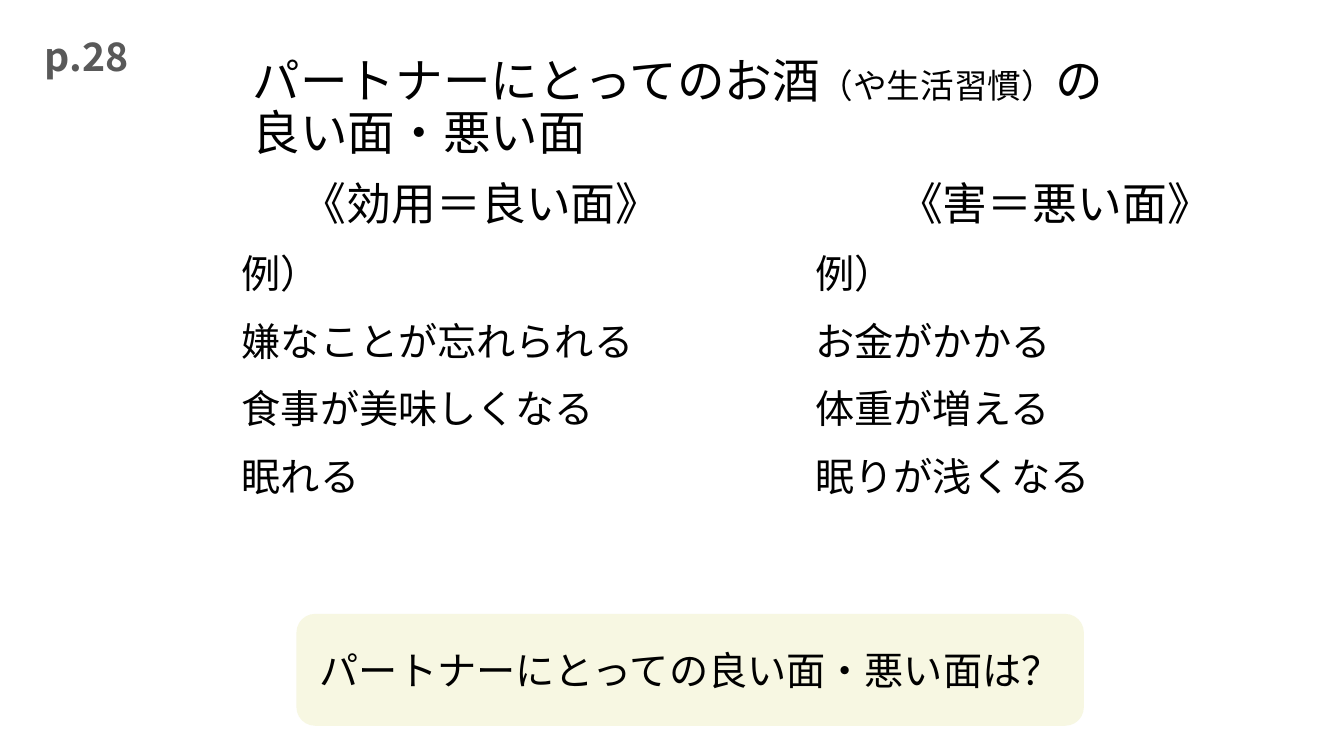
from lxml import etree
from pptx import Presentation
from pptx.dml.color import RGBColor
from pptx.enum import shapes, text
from pptx.oxml import ns
from pptx.util import Inches, Pt

FONT = "Noto Sans CJK JP"
COLORS = {"ink": "000000", "gray": "595959", "paper": "FFFFFF", "cream": "F7F7E2"}
LEFT, CENTER = text.PP_ALIGN.LEFT, text.PP_ALIGN.CENTER
TOP, MIDDLE, BOTTOM = (text.MSO_ANCHOR.TOP, text.MSO_ANCHOR.MIDDLE,
                       text.MSO_ANCHOR.BOTTOM)


def write(shape, paras, anchor=TOP, color="ink", bold=False, line=1.0, gap=0, indent=0):
    """Fill a shape with paragraphs, each an (alignment, [(text, size), ...]) pair."""
    frame = shape.text_frame
    frame.word_wrap = True
    frame.vertical_anchor = anchor
    for i, (align, runs) in enumerate(paras):
        para = frame.add_paragraph() if i else frame.paragraphs[0]
        para.alignment = align
        para.line_spacing = line
        para.space_before = Pt(gap if i else 0)
        para._p.get_or_add_pPr().set("marL", str(Inches(indent)))
        for words, size in runs:
            for j, part in enumerate(words.split("\n")):
                if j:
                    para.add_line_break()
                run = para.add_run()
                run.text = part
                run.font.size = Pt(size)
                run.font.bold = bold
                run.font.color.rgb = RGBColor.from_string(COLORS[color])
                run.font.name = FONT
                props = run._r.get_or_add_rPr()
                etree.SubElement(props, ns.qn("a:ea")).set("typeface", FONT)


def panel(kind, box, fill):
    shape = slide.shapes.add_shape(kind, *map(Inches, box))
    shape.shadow.inherit = False
    shape.fill.solid()
    shape.fill.fore_color.rgb = RGBColor.from_string(COLORS[fill])
    shape.line.fill.background()
    return shape


prs = Presentation()
prs.slide_width, prs.slide_height = Inches(13.33), Inches(7.5)
slide = prs.slides.add_slide(prs.slide_layouts[6])

title = slide.shapes.add_textbox(*map(Inches, (2.41, 0.33, 9.11, 1.31)))
write(title, [(LEFT, [("パートナーにとってのお酒", 34), ("（や生活習慣）", 24),
                      ("の\n良い面・悪い面", 34)])], anchor=BOTTOM, line=0.9)

columns = [
    (2.25, 3.61, "《効用＝良い面》",
     ["例）", "嫌なことが忘れられる", "食事が美味しくなる", "眠れる"]),
    (7.94, 3.53, "《害＝悪い面》",
     ["例）", "お金がかかる", "体重が増える", "眠りが浅くなる"]),
]
for left, height, head, items in columns:
    column = panel(shapes.MSO_SHAPE.RECTANGLE, (left, 1.75, 5, height), "paper")
    paras = [(CENTER, [(head, 32)])] + [(LEFT, [(item, 28)]) for item in items]
    write(column, paras, line=0.9, gap=18, indent=0.05)

prompt = panel(shapes.MSO_SHAPE.ROUNDED_RECTANGLE, (2.94, 6.09, 7.81, 1.11), "cream")
write(prompt, [(CENTER, [("パートナーにとっての良い面・悪い面は？", 28)])], anchor=MIDDLE)

page = slide.shapes.add_textbox(*map(Inches, (0.13, 0.13, 1.46, 0.85)))
write(page, [(CENTER, [("p.28", 28)])], anchor=MIDDLE, color="gray", bold=True)

prs.save("out.pptx")
